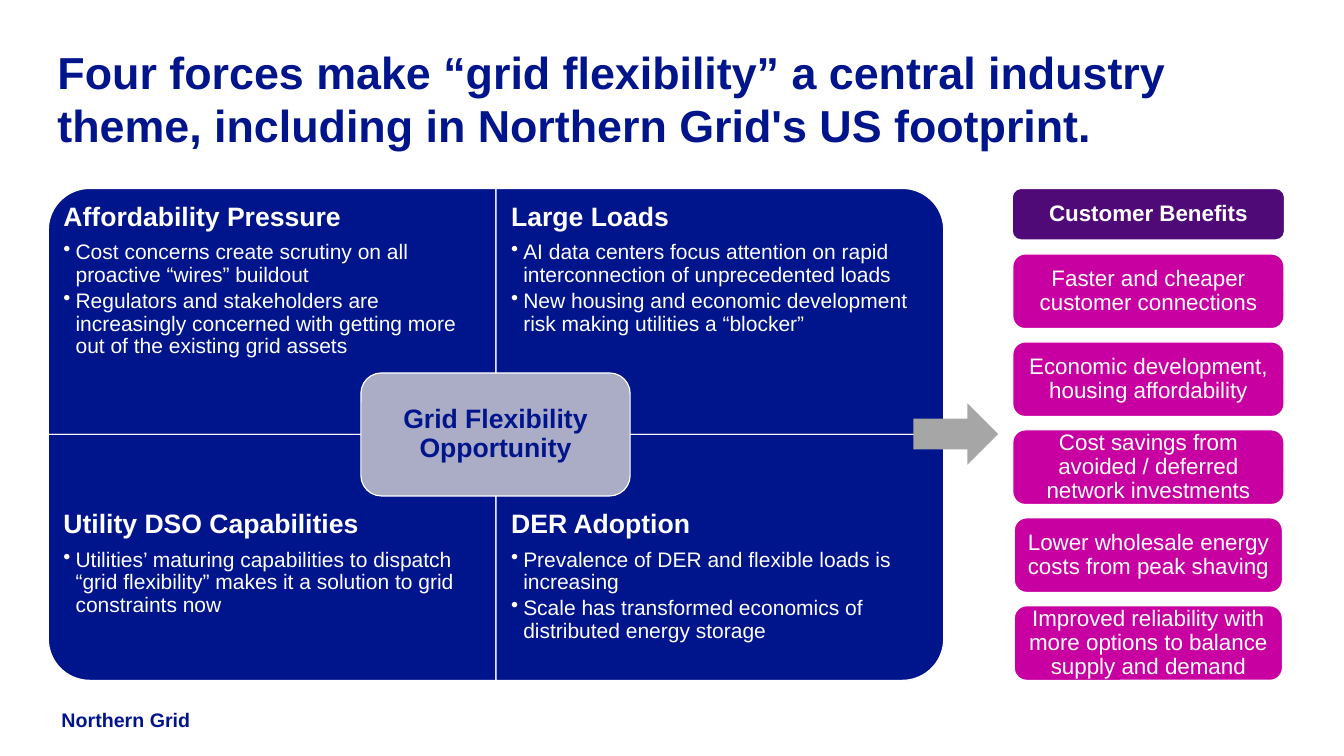
import math

import lxml.etree
import pptx
import pptx.dml.color
import pptx.enum.shapes
import pptx.enum.text
import pptx.oxml.ns
import pptx.util

Inches = pptx.util.Inches
Pt = pptx.util.Pt
Anchor = pptx.enum.text.MSO_ANCHOR
Align = pptx.enum.text.PP_ALIGN
Preset = pptx.enum.shapes.MSO_SHAPE

COLOURS = {
    "navy": "00148C",
    "white": "FFFFFF",
    "lavender": "ABACC5",
    "grey": "A6A6A6",
    "magenta": "C800A1",
    "purple": "500A78",
}
FONT = "Arial"

# Matrix geometry, in inches
MATRIX_CENTRE = (4.92, 4.31)
QUADRANT = (4.44, 2.44)
CORNER_RADIUS = 0.41

# Horizontal side, vertical side, heading, bullets
FORCES = [
    (-1, -1, "Affordability Pressure", [
        "Cost concerns create scrutiny on all proactive “wires” buildout",
        "Regulators and stakeholders are increasingly concerned with getting "
        "more out of the existing grid assets"]),
    (1, -1, "Large Loads", [
        "AI data centers focus attention on rapid interconnection of "
        "unprecedented loads",
        "New housing and economic development risk making utilities a “blocker”"]),
    (-1, 1, "Utility DSO Capabilities", [
        "Utilities’ maturing capabilities to dispatch “grid flexibility” makes "
        "it a solution to grid constraints now"]),
    (1, 1, "DER Adoption", [
        "Prevalence of DER and flexible loads is increasing",
        "Scale has transformed economics of distributed energy storage"]),
]

# Benefit and box width
BENEFITS = [
    ("Faster and cheaper customer connections", 2.69),
    ("Economic development, housing affordability", 2.69),
    ("Cost savings from avoided / deferred network investments", 2.69),
    ("Lower wholesale energy costs from peak shaving", 2.66),
    ("Improved reliability with more options to balance supply and demand", 2.66),
]


def colour(name):
    return pptx.dml.color.RGBColor.from_string(COLOURS[name])


def style_shape(shape, fill, line=None):
    shape.shadow.inherit = False
    shape.fill.solid()
    shape.fill.fore_color.rgb = colour(fill)
    if line:
        shape.line.color.rgb = colour(line)
        shape.line.width = Pt(0.85)
    else:
        shape.line.fill.background()


def set_frame(frame, anchor, left, top, right, bottom, wrap=True):
    frame.word_wrap = wrap
    frame.auto_size = pptx.enum.text.MSO_AUTO_SIZE.NONE
    frame.vertical_anchor = anchor
    frame.margin_left, frame.margin_top = Inches(left), Inches(top)
    frame.margin_right, frame.margin_bottom = Inches(right), Inches(bottom)


def write(paragraph, text, size, ink, bold=False, align=Align.LEFT,
          spacing=0.9, after=0):
    paragraph.alignment = align
    paragraph.line_spacing = spacing
    paragraph.space_before = Pt(0)
    paragraph.space_after = Pt(after)
    run = paragraph.add_run()
    run.text = text
    run.font.name = FONT
    run.font.size = Pt(size)
    run.font.bold = bold
    run.font.color.rgb = colour(ink)


def add_bullet(paragraph):
    properties = paragraph._p.get_or_add_pPr()
    properties.set("marL", str(Inches(0.12)))
    properties.set("indent", str(-Inches(0.12)))
    bullet = lxml.etree.SubElement(properties, pptx.oxml.ns.qn("a:buChar"))
    bullet.set("char", "•")


def add_quadrant(slide, across, down, heading, bullets):
    centre_x, centre_y = MATRIX_CENTRE
    width, height = QUADRANT
    # Outline from the matrix centre, with the outer corner rounded
    outline = [(0, 0), (width, 0)]
    for step in range(25):
        angle = math.radians(90 * step / 24)
        outline.append((width - CORNER_RADIUS * (1 - math.cos(angle)),
                        height - CORNER_RADIUS * (1 - math.sin(angle))))
    outline.append((0, height))
    points = [(Inches(centre_x + across * x), Inches(centre_y + down * y))
              for x, y in outline]
    builder = slide.shapes.build_freeform(*points[0])
    builder.add_line_segments(points[1:], close=True)
    shape = builder.convert_to_shape()
    style_shape(shape, "navy", "white")

    frame = shape.text_frame
    top, bottom = (0.15, 0.76) if down < 0 else (0.76, 0.15)
    set_frame(frame, Anchor.TOP, 0.15, top, 0.15, bottom)
    write(frame.paragraphs[0], heading, 19, "white", bold=True, after=6.65)
    for text in bullets:
        paragraph = frame.add_paragraph()
        add_bullet(paragraph)
        write(paragraph, text, 15, "white", after=2.25)


def add_box(slide, left, top, width, height, text, fill, size,
            ink="white", bold=False, margin=0.04):
    shape = slide.shapes.add_shape(
        Preset.ROUNDED_RECTANGLE,
        Inches(left), Inches(top), Inches(width), Inches(height))
    style_shape(shape, fill, "white")
    set_frame(shape.text_frame, Anchor.MIDDLE, margin, margin, margin, margin)
    write(shape.text_frame.paragraphs[0], text, size, ink, bold, Align.CENTER)


def add_title(slide, text):
    title = slide.shapes.title
    title.left, title.top = Inches(0.47), Inches(0.39)
    title.width, title.height = Inches(12.39), Inches(0.63)
    set_frame(title.text_frame, Anchor.TOP, 0.1, 0.05, 0.1, 0.05)
    write(title.text_frame.paragraphs[0], text, 32, "navy", bold=True, spacing=1.0)


def add_footer(slide, text):
    box = slide.shapes.add_textbox(
        Inches(0.61), Inches(7.02), Inches(1.28), Inches(0.24))
    set_frame(box.text_frame, Anchor.BOTTOM, 0, 0, 0, 0, wrap=False)
    write(box.text_frame.paragraphs[0], text, 14, "navy", bold=True, spacing=1.0)


def add_arrow(slide):
    arrow = slide.shapes.add_shape(
        Preset.RIGHT_ARROW, Inches(9.06), Inches(4), Inches(0.84), Inches(0.61))
    style_shape(arrow, "grey")


def main():
    presentation = pptx.Presentation()
    presentation.slide_width = Inches(13.33)
    presentation.slide_height = Inches(7.5)
    slide = presentation.slides.add_slide(presentation.slide_layouts[5])

    add_footer(slide, "Northern Grid")
    add_title(slide, "Four forces make “grid flexibility” a central industry "
                     "theme, including in Northern Grid's US footprint.")

    # Four forces around the opportunity
    for force in FORCES:
        add_quadrant(slide, *force)
    add_box(slide, 3.58, 3.7, 2.67, 1.22, "Grid Flexibility Opportunity",
            "lavender", 19, ink="navy", bold=True, margin=0.08)
    add_arrow(slide)

    # Customer benefits, centred in one column
    column_centre = 11.39
    add_box(slide, column_centre - 1.35, 1.87, 2.7, 0.51, "Customer Benefits",
            "purple", 16, bold=True)
    for index, (benefit, width) in enumerate(BENEFITS):
        add_box(slide, column_centre - width / 2, 2.52 + 0.8725 * index,
                width, 0.74, benefit, "magenta", 16)

    presentation.save("out.pptx")


if __name__ == "__main__":
    main()
